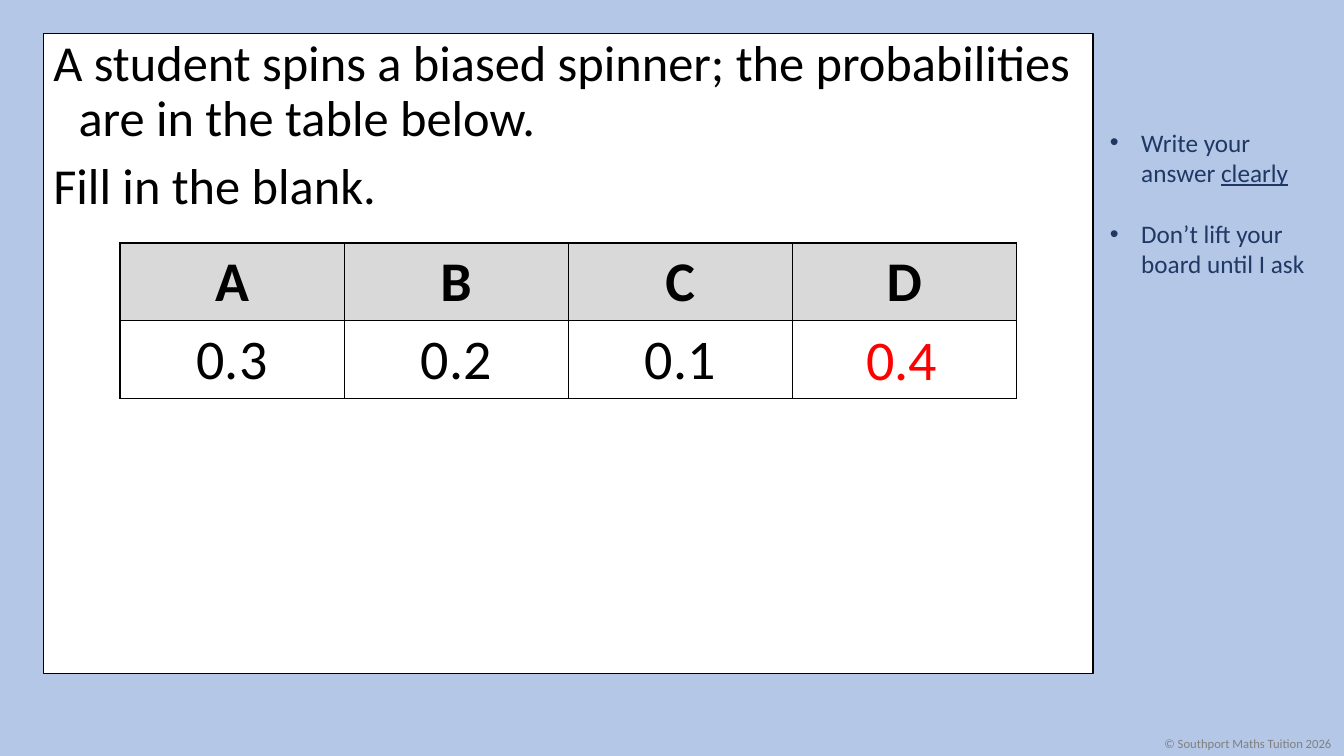
"""Build a maths starter slide about a biased spinner."""
from dataclasses import dataclass

from lxml.etree import SubElement
from pptx import Presentation
from pptx.dml.color import RGBColor
from pptx.enum.shapes import MSO_SHAPE
from pptx.enum.text import MSO_ANCHOR, PP_ALIGN
from pptx.oxml.ns import qn
from pptx.util import Inches, Pt

SLIDE_WIDTH, SLIDE_HEIGHT = Inches(13.33), Inches(7.5)
BLACK, NAVY, GREY, RED = "000000", "203864", "808080", "FF0000"
QUESTION = (
    "A student spins a biased spinner; the probabilities are in the table below.",
    "Fill in the blank.",
)
HINTS = (("Write your answer ", "clearly"), ("Don’t lift your board until I ask", ""))
PROBABILITIES = {"A": "0.3", "B": "0.2", "C": "0.1", "D": ""}


@dataclass(frozen=True)
class Area:
    """A rectangle in percentages of the slide's size."""

    left: float
    top: float
    width: float
    height: float

    def box(self) -> tuple[int, int, int, int]:
        """Return left, top, width and height as lengths."""
        return (
            int(SLIDE_WIDTH * self.left / 100),
            int(SLIDE_HEIGHT * self.top / 100),
            int(SLIDE_WIDTH * self.width / 100),
            int(SLIDE_HEIGHT * self.height / 100),
        )


@dataclass(frozen=True)
class Label:
    """A text box holding one line."""

    text: str
    area: Area
    size: int
    colour: str
    alignment: PP_ALIGN
    wrap: bool


PANEL = Area(3.23, 4.4, 78.09, 84.67)
HINT_AREA = Area(81.85, 16.13, 17.4, 21.6)
TABLE_AREA = Area(8.93, 32.13, 66.69, 20.6)
LABELS = (
    Label("© Southport Maths Tuition 2026", Area(85.9, 96.67, 14.1, 3.33), 9, GREY, PP_ALIGN.LEFT, False),
    Label("0.4", Area(62.04, 42.27, 10.13, 10.27), 40, RED, PP_ALIGN.CENTER, True),
)


def rgb(colour: str) -> RGBColor:
    """Turn a hex string into a colour."""
    return RGBColor.from_string(colour)


def style(font, size: int, colour: str, bold: bool = False) -> None:
    """Format the font of a paragraph or run."""
    font.name, font.size, font.bold = "Calibri", Pt(size), bold
    font.color.rgb = rgb(colour)


def indent(paragraph, inches: float, bullet: str = "") -> None:
    """Give a paragraph a hanging indent and an optional bullet."""
    properties = paragraph._p.get_or_add_pPr()
    properties.set("marL", str(Inches(inches)))
    properties.set("indent", str(-Inches(inches)))
    if bullet:
        SubElement(properties, qn("a:buFont"), typeface="Arial")
        SubElement(properties, qn("a:buChar"), char=bullet)


def paragraphs_for(frame, count: int) -> list:
    """Return the given number of paragraphs in a text frame."""
    return [frame.paragraphs[0], *(frame.add_paragraph() for _ in range(count - 1))]


def draw_question(slide) -> None:
    """Draw the white panel with the question."""
    panel = slide.shapes.add_shape(MSO_SHAPE.RECTANGLE, *PANEL.box())
    panel.shadow.inherit = False
    panel.fill.solid()
    panel.fill.fore_color.rgb = rgb("FFFFFF")
    panel.line.color.rgb, panel.line.width = rgb(BLACK), Pt(1)
    frame = panel.text_frame
    frame.word_wrap, frame.vertical_anchor = True, MSO_ANCHOR.TOP
    for index, paragraph in enumerate(paragraphs_for(frame, len(QUESTION))):
        paragraph.text = QUESTION[index]
        paragraph.alignment, paragraph.line_spacing = PP_ALIGN.LEFT, 0.9
        paragraph.space_before = Pt(10 if index else 0)
        indent(paragraph, 0.25)
        style(paragraph.font, 36, BLACK)


def draw_hints(slide) -> None:
    """Draw the bulleted hints beside the panel."""
    frame = slide.shapes.add_textbox(*HINT_AREA.box()).text_frame
    frame.word_wrap = True
    for index, paragraph in enumerate(paragraphs_for(frame, len(HINTS))):
        paragraph.space_before = Pt(22 if index else 0)
        indent(paragraph, 0.31, "•")
        style(paragraph.font, 18, NAVY)
        plain, underlined = HINTS[index]
        paragraph.add_run().text = plain
        if underlined:
            run = paragraph.add_run()
            run.text, run.font.underline = underlined, True


def draw_borders(cell) -> None:
    """Outline a table cell in black."""
    properties = cell._tc.get_or_add_tcPr()
    for side in ("lnL", "lnR", "lnT", "lnB"):
        line = SubElement(properties, qn(f"a:{side}"), w=str(Pt(1)))
        fill = SubElement(line, qn("a:solidFill"))
        SubElement(fill, qn("a:srgbClr"), val=BLACK)


def draw_table(slide) -> None:
    """Draw the table of probabilities."""
    rows = (tuple(PROBABILITIES), tuple(PROBABILITIES.values()))
    table = slide.shapes.add_table(len(rows), len(PROBABILITIES), *TABLE_AREA.box()).table
    table.first_row = table.horz_banding = False
    for row_index, row in enumerate(rows):
        for column_index, text in enumerate(row):
            heading = row_index == 0
            cell = table.cell(row_index, column_index)
            draw_borders(cell)
            cell.fill.solid()
            cell.fill.fore_color.rgb = rgb("D9D9D9" if heading else "FFFFFF")
            paragraph = cell.text_frame.paragraphs[0]
            paragraph.text, paragraph.alignment = text, PP_ALIGN.CENTER
            style(paragraph.font, 40, BLACK, heading)


def draw_label(slide, label: Label) -> None:
    """Draw a text box with one line."""
    frame = slide.shapes.add_textbox(*label.area.box()).text_frame
    frame.word_wrap = label.wrap
    paragraph = frame.paragraphs[0]
    paragraph.text, paragraph.alignment = label.text, label.alignment
    style(paragraph.font, label.size, label.colour)


def main() -> None:
    """Build and save the presentation."""
    presentation = Presentation()
    presentation.slide_width, presentation.slide_height = SLIDE_WIDTH, SLIDE_HEIGHT
    slide = presentation.slides.add_slide(presentation.slide_layouts[6])
    slide.background.fill.solid()
    slide.background.fill.fore_color.rgb = rgb("B4C7E7")
    draw_question(slide)
    draw_hints(slide)
    draw_table(slide)
    for label in LABELS:
        draw_label(slide, label)
    presentation.save("out.pptx")


if __name__ == "__main__":
    main()
